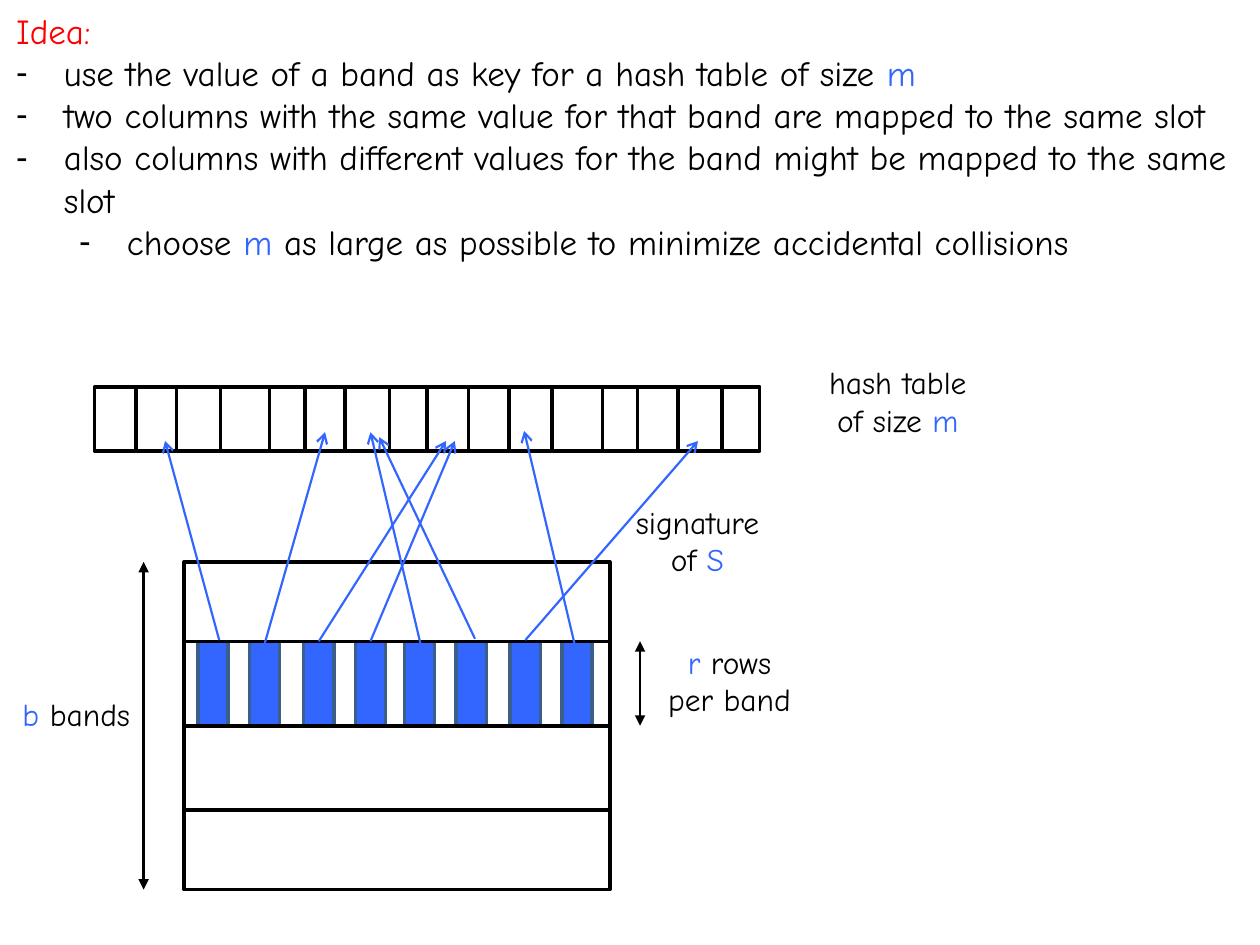
import pptx
import pptx.dml.color
import pptx.enum.shapes
import pptx.enum.text
import pptx.oxml
import pptx.oxml.ns
import pptx.util

COLORS = {"ink": "000000", "blue": "3366FF", "edge": "3A5F8C", "red": "FF0000"}
FONT = "Comic Neue"
COLUMNS, ROWS = 1000, 750
WIDTH, HEIGHT = pptx.util.Inches(10), pptx.util.Inches(7.5)

IDEA = [
    (None, [("Idea:", "red")]),
    (0, [("use the value of a band as key for a hash table of size ", "ink"), ("m", "blue")]),
    (0, [("two columns with the same value for that band are mapped to the same slot", "ink")]),
    (0, [("also columns with different values for the band might be mapped to the same slot", "ink")]),
    (1, [("choose ", "ink"), ("m", "blue"),
         (" as large as possible to minimize accidental collisions", "ink")]),
]
LABELS = [
    ((8, 547, 126, 40), "LEFT", [("b", "blue"), (" bands", "ink")]),
    ((516, 505, 126, 71), "CENTER", [("r", "blue"), (" rows per band", "ink")]),
    ((484, 394, 139, 71), "CENTER", [("signature of ", "ink"), ("S", "blue")]),
    ((643, 283, 139, 101), "CENTER", [("hash table of size ", "ink"), ("m", "blue")]),
]
SIGNATURE = (146, 446, 338, 260)
BAND_EDGES = [509, 576, 643]
HASH_TABLE = (75, 307, 528, 51)
SLOT_EDGES = [108, 140, 175, 214, 242, 274, 309, 339, 372, 404, 438, 478, 506, 538, 573]
BAND_VALUES = [157, 198, 241, 282, 321, 362, 405, 446]
VALUE_WIDTH = 24
MAPPINGS = [
    ((174, 508), (131, 350)), ((210, 511), (258, 343)),
    ((253, 509), (354, 350)), ((294, 509), (361, 350)),
    ((334, 512), (294, 343)), ((377, 507), (301, 347)),
    ((417, 508), (554, 350)), ((456, 511), (416, 342)),
]
MEASURES = [((114, 446), (114, 706)), ((508, 509), (508, 576))]


def across(columns):
    return round(WIDTH * columns / COLUMNS)


def down(rows):
    return round(HEIGHT * rows / ROWS)


def place(area):
    left, top, width, height = area
    return across(left), down(top), across(width), down(height)


def apply(target, values):
    for name, value in values.items():
        setattr(target, name, value)


def color(name):
    return pptx.dml.color.RGBColor.from_string(COLORS[name])


def add_element(parent, tag, **attributes):
    child = pptx.oxml.parse_xml(f"<a:{tag} {pptx.oxml.ns.nsdecls('a')}/>")
    for name, value in attributes.items():
        child.set(name, value)
    parent.append(child)


def add_box(shapes, area, line="ink", fill=None):
    box = shapes.add_shape(pptx.enum.shapes.MSO_SHAPE.RECTANGLE, *place(area))
    box.shadow.inherit = False
    box.line.color.rgb = color(line)
    box.line.width = pptx.util.Pt(2)
    if fill:
        box.fill.solid()
        box.fill.fore_color.rgb = color(fill)
    else:
        box.fill.background()


def add_line(shapes, start, end, line="ink", width=2, head=None, tail=None):
    connector = shapes.add_connector(
        pptx.enum.shapes.MSO_CONNECTOR.STRAIGHT,
        across(start[0]), down(start[1]), across(end[0]), down(end[1]))
    connector.line.color.rgb = color(line)
    connector.line.width = pptx.util.Pt(width)
    properties = connector.element.spPr
    outline = properties.find(pptx.oxml.ns.qn("a:ln"))
    for tag, kind in (("headEnd", head), ("tailEnd", tail)):
        if kind:
            add_element(outline, tag, type=kind)
    add_element(properties, "effectLst")


def add_text(shapes, area, paragraphs, size, align="LEFT"):
    frame = shapes.add_textbox(*place(area)).text_frame
    apply(frame, {"word_wrap": True,
                  "auto_size": pptx.enum.text.MSO_AUTO_SIZE.SHAPE_TO_FIT_TEXT})
    for index, (level, spans) in enumerate(paragraphs):
        para = frame.add_paragraph() if index else frame.paragraphs[0]
        para.alignment = getattr(pptx.enum.text.PP_ALIGN, align)
        if level is not None:
            para.level = level
            properties = para._p.get_or_add_pPr()
            hang = pptx.util.Inches(0.38)
            properties.set("marL", str(hang + level * pptx.util.Inches(0.5)))
            properties.set("indent", str(-hang))
            add_element(properties, "buFont", typeface="Arial")
            add_element(properties, "buChar", char="-")
        for words, tint in spans:
            span = para.add_run()
            span.text = words
            apply(span.font, {"name": FONT, "size": pptx.util.Pt(size)})
            span.font.color.rgb = color(tint)


def main():
    deck = pptx.Presentation()
    apply(deck, {"slide_width": WIDTH, "slide_height": HEIGHT})
    shapes = deck.slides.add_slide(deck.slide_layouts[6]).shapes

    band_top, band_bottom = BAND_EDGES[:2]
    for left in BAND_VALUES:
        add_box(shapes, (left, band_top, VALUE_WIDTH, band_bottom - band_top), "edge", "blue")
    add_text(shapes, (3, 3, 993, 246), IDEA, 20)

    signature = shapes.add_group_shape().shapes
    add_box(signature, SIGNATURE)
    left, top, width, height = SIGNATURE
    for edge in BAND_EDGES:
        add_line(signature, (left, edge), (left + width, edge))
    for start, end in MEASURES:
        add_line(shapes, start, end, width=1.5, head="triangle", tail="triangle")

    add_box(shapes, HASH_TABLE)
    left, top, width, height = HASH_TABLE
    for edge in SLOT_EDGES:
        add_line(shapes, (edge, top), (edge, top + height))
    for area, align, spans in LABELS:
        add_text(shapes, area, [(None, spans)], 18, align)
    for start, end in MAPPINGS:
        add_line(shapes, start, end, "blue", 1.25, tail="arrow")

    deck.save("out.pptx")


if __name__ == "__main__":
    main()
